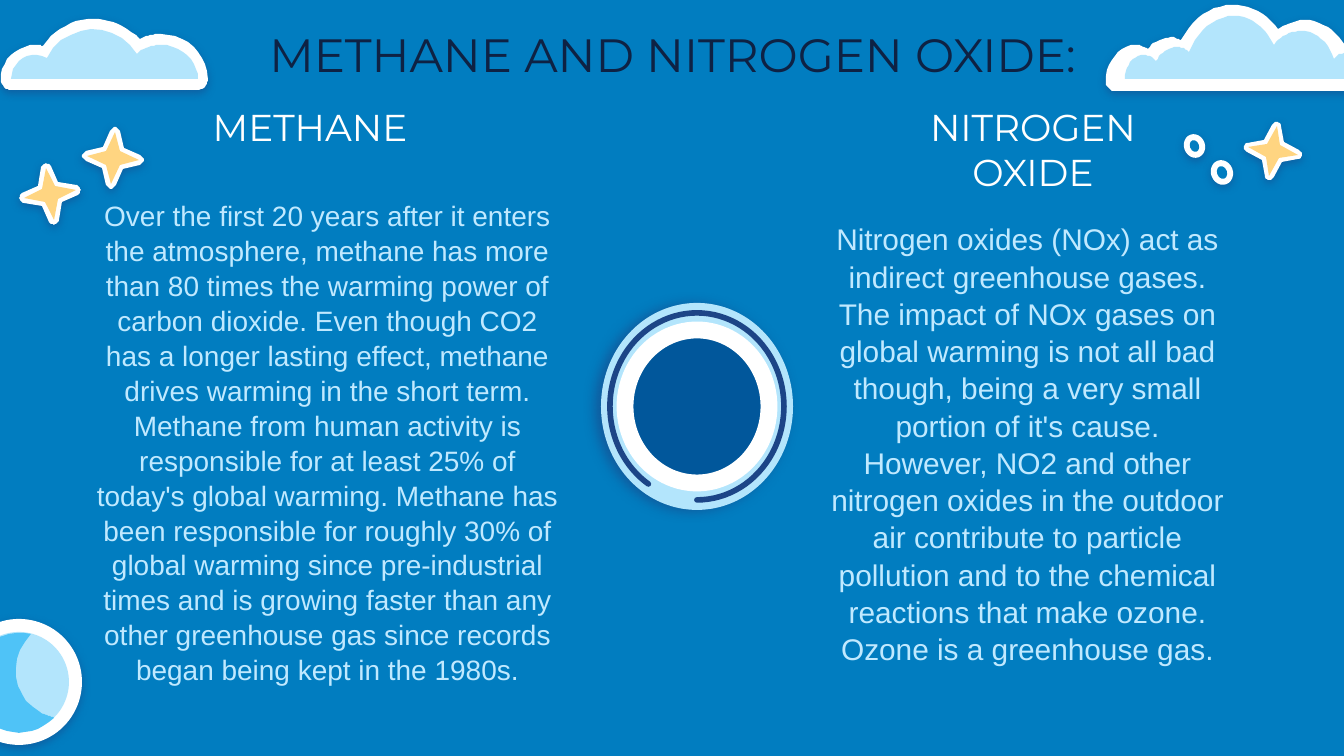
from math import cos, radians, sin

from lxml.etree import SubElement
from pptx import Presentation
from pptx.dml.color import RGBColor
from pptx.enum.shapes import MSO_SHAPE as SHAPE
from pptx.enum.text import MSO_ANCHOR, MSO_AUTO_SIZE, PP_ALIGN
from pptx.oxml.ns import qn
from pptx.util import Emu, Pt

PX = 914400 / 134.4
WHITE, PALE, SKY, BLUE = "FFFFFF", "B3E5FC", "4FC3F7", "017DC0"
NAVY, DEEP, YELLOW, INK, BODY = "1C4587", "01579B", "FFD581", "0E2244", "C0E9FF"

# Outlines in px inside their box: a pair is a line, six numbers are a curve
LEFT_CLOUD = [(94, 0), (74, 0, 55, 9, 43, 27), (40, 26, 38, 26, 36, 26),
              (17, 26, 0, 42, 1, 60), (1, 66, 5, 71, 11, 71), (198, 71),
              (203, 71, 208, 66, 208, 60), (208, 34, 185, 15, 161, 15),
              (155, 15, 146, 16, 140, 20), (126, 7, 110, 0, 94, 0)]
LEFT_CLOUD_INNER = [(161, 26), (153, 26, 144, 28, 137, 35), (117, 0, 65, 3, 47, 39),
                    (31, 30, 11, 42, 11, 60), (198, 60), (198, 42, 181, 26, 161, 26)]
RIGHT_CLOUD = [(126, 0), (106, 0, 86, 13, 75, 35), (71, 34, 69, 32, 65, 32),
               (56, 34, 47, 36, 42, 44), (38, 42, 34, 40, 30, 40),
               (13, 40, 0, 56, 0, 77), (0, 82, 4, 86, 9, 86), (269, 86),
               (274, 86, 278, 82, 278, 77), (278, 56, 265, 39, 249, 39),
               (245, 39, 242, 40, 239, 40), (230, 26, 215, 15, 199, 15),
               (190, 15, 180, 19, 172, 24), (161, 9, 145, 0, 126, 0)]
RIGHT_CLOUD_INNER = [(241, 48), (235, 48, 231, 50, 228, 54), (223, 38, 210, 26, 195, 26),
                     (184, 26, 175, 31, 168, 40), (160, 23, 145, 11, 128, 11),
                     (109, 11, 91, 26, 83, 47), (81, 44, 75, 42, 71, 42),
                     (62, 42, 55, 48, 50, 56), (47, 52, 42, 50, 38, 50),
                     (27, 50, 19, 60, 19, 74), (261, 74), (261, 60, 251, 48, 241, 48)]
CRESCENT = [(62, 2), (38, -3, 12, 9, 4, 32), (-5, 55, 4, 82, 26, 94),
            (44, 105, 69, 102, 85, 86), (81, 84, 75, 83, 71, 80), (44, 66, 38, 27, 62, 2)]
# One arm of a star around its centre, turned four times
STAR_EDGE = [(7, -27), (5, -32, -1, -32, -3, -27), (-10, -11)]
STAR_CORE = [(2, -26), (-7, -7)]

METHANE = ("Over the first 20 years after it enters the atmosphere, methane has more than 80 "
           "times the warming power of carbon dioxide. Even though CO2 has a longer lasting "
           "effect, methane drives warming in the short term. Methane from human activity is "
           "responsible for at least 25% of today's global warming. Methane has been "
           "responsible for roughly 30% of global warming since pre-industrial times and is "
           "growing faster than any other greenhouse gas since records began being kept in "
           "the 1980s.")
NITROGEN = ("Nitrogen oxides (NOx) act as indirect greenhouse gases.",
            "The impact of NOx gases on global warming is not all bad though, being a very "
            "small portion of it's cause. However, NO2 and other nitrogen oxides in the "
            "outdoor air contribute to particle pollution and to the chemical reactions that "
            "make ozone. Ozone is a greenhouse gas.")


def px(n):
    return Emu(round(n * PX))


def rgb(value):
    return RGBColor.from_string(value)


def style(sp, fill=None, line=None, width=0, shadow=None):
    """Shadow is blur and distance in points, direction and opacity in percent."""
    sp.shadow.inherit = False
    if fill:
        sp.fill.solid()
        sp.fill.fore_color.rgb = rgb(fill)
    else:
        sp.fill.background()
    if line:
        sp.line.color.rgb = rgb(line)
        sp.line.width = Pt(width)
    else:
        sp.line.fill.background()
    if shadow:
        blur, dist, angle, alpha = shadow
        effects = sp._element.spPr.find(qn("a:effectLst"))
        outer = SubElement(effects, qn("a:outerShdw"), blurRad=str(Pt(blur)),
                           dist=str(Pt(dist)), dir=str(angle * 60000),
                           algn="bl", rotWithShape="0")
        color = SubElement(outer, qn("a:srgbClr"), val=NAVY)
        SubElement(color, qn("a:alpha"), val=str(alpha * 1000))
    return sp


SOFT = (4.5, 1.5, 90, 50)


def outline(slide, x, y, segments, **look):
    points = [segments[0]]
    for seg in segments[1:]:
        if len(seg) == 2:
            points.append(seg)
            continue
        p0, p1, p2, p3 = points[-1], seg[:2], seg[2:4], seg[4:]
        for t in (i / 10 for i in range(1, 11)):
            u = 1 - t
            points.append(tuple(u**3 * a + 3 * u * u * t * b + 3 * u * t * t * c + t**3 * d
                                for a, b, c, d in zip(p0, p1, p2, p3)))
    points = [(x + a, y + b) for a, b in points]
    builder = slide.shapes.build_freeform(*points[0], scale=PX)
    builder.add_line_segments(points[1:], close=True)
    return style(builder.convert_to_shape(), **look)


def preset(slide, kind, x, y, w, h, **look):
    return style(slide.shapes.add_shape(kind, px(x), px(y), px(w), px(h)), **look)


def cloud(slide, x, y, edge, inner):
    outline(slide, x, y, edge, fill=WHITE, shadow=SOFT)
    outline(slide, x, y, inner, fill=PALE)


def turn(seg, degrees, size):
    c, s = cos(radians(degrees)) * size, sin(radians(degrees)) * size
    return tuple(v for a, b in zip(seg[::2], seg[1::2]) for v in (a * c - b * s, a * s + b * c))


def star(slide, cx, cy, tilt, size=1):
    for arm, look in ((STAR_EDGE, dict(fill=WHITE, shadow=SOFT)), (STAR_CORE, dict(fill=YELLOW))):
        segments = [turn(seg, tilt - 90 * k, size) for k in range(4) for seg in arm]
        outline(slide, cx, cy, segments, **look)


def planet(slide, x, y, size):
    rim = 13
    preset(slide, SHAPE.OVAL, x, y, size, size, fill=WHITE, shadow=SOFT)
    preset(slide, SHAPE.OVAL, x + rim, y + rim, size - 2 * rim, size - 2 * rim, fill=PALE)
    outline(slide, x + rim, y + rim, CRESCENT, fill=SKY)


def bubble(slide, x, y, w, h):
    for inset, look in ((0, dict(fill=WHITE, shadow=SOFT)), (6, dict(fill=BLUE))):
        sp = preset(slide, SHAPE.OVAL, x + inset, y + inset, w - 2 * inset, h - 2 * inset, **look)
        sp.rotation = -20


def dial(slide, x, y, w, h):
    preset(slide, SHAPE.OVAL, x, y, w, h, fill=PALE, shadow=(6.8, 3, 169, 61))
    preset(slide, SHAPE.OVAL, x + 24, y + 27, w - 48, h - 54, fill=DEEP, line=WHITE, width=9)
    for start, end in ((-144, 90), (122, -167)):
        arc = preset(slide, SHAPE.ARC, x + 9, y + 10, w - 18, h - 20, line=NAVY, width=3)
        arc.adjustments[0], arc.adjustments[1] = start * 0.6, end * 0.6
        arc.line._get_or_add_ln().set("cap", "rnd")


def text(sp, x, y, w, h, paragraphs, size, font, color, spacing=1.0):
    sp.left, sp.top, sp.width, sp.height = (px(n) for n in (x, y, w, h))
    tf = sp.text_frame
    frame = dict(word_wrap=True, auto_size=MSO_AUTO_SIZE.NONE, vertical_anchor=MSO_ANCHOR.MIDDLE)
    frame.update({f"margin_{side}": px(13) for side in ("left", "top", "right", "bottom")})
    for name, value in frame.items():
        setattr(tf, name, value)
    for i, line in enumerate(paragraphs):
        p = tf.add_paragraph() if i else tf.paragraphs[0]
        p.alignment, p.line_spacing = PP_ALIGN.CENTER, spacing
        r = p.add_run()
        r.text = line
        for name, value in dict(size=Pt(size), name=font, bold=False).items():
            setattr(r.font, name, value)
        r.font.color.rgb = rgb(color)


def column(slide, heading, heading_box, body, body_box, size):
    for box, lines, look in ((body_box, body, (size, "Arial", BODY, 1.04)),
                             (heading_box, [heading], (20, "Montserrat", WHITE))):
        text(slide.shapes.add_textbox(0, 0, 0, 0), *box, lines, *look)


def main():
    prs = Presentation()
    prs.slide_width, prs.slide_height = px(1344), px(756)
    slide = prs.slides.add_slide(prs.slide_layouts[5])
    slide.background.fill.solid()
    slide.background.fill.fore_color.rgb = rgb(BLUE)

    # Sky decoration
    cloud(slide, 1106, 5, RIGHT_CLOUD, RIGHT_CLOUD_INNER)
    planet(slide, -44, 619, 126)
    cloud(slide, 0, 19, LEFT_CLOUD, LEFT_CLOUD_INNER)

    # Title and the two columns
    text(slide.shapes.title, 106, 22, 1133, 63, ["METHANE AND NITROGEN OXIDE:"],
         25, "Montserrat", INK)
    column(slide, "METHANE", (138, 93, 344, 67), [METHANE], (79, 375, 497, 134), 15)
    column(slide, "NITROGEN OXIDE", (861, 116, 344, 67), NITROGEN, (818, 288, 419, 310), 16)

    # Dial, stars and bubbles
    dial(slide, 601, 303, 192, 207)
    star(slide, 113, 158, 0)
    star(slide, 50, 194, -13)
    star(slide, 1273, 151, 4, 0.95)
    bubble(slide, 1184, 134, 21, 24)
    bubble(slide, 1211, 160, 22, 25)
    prs.save("out.pptx")


if __name__ == "__main__":
    main()
